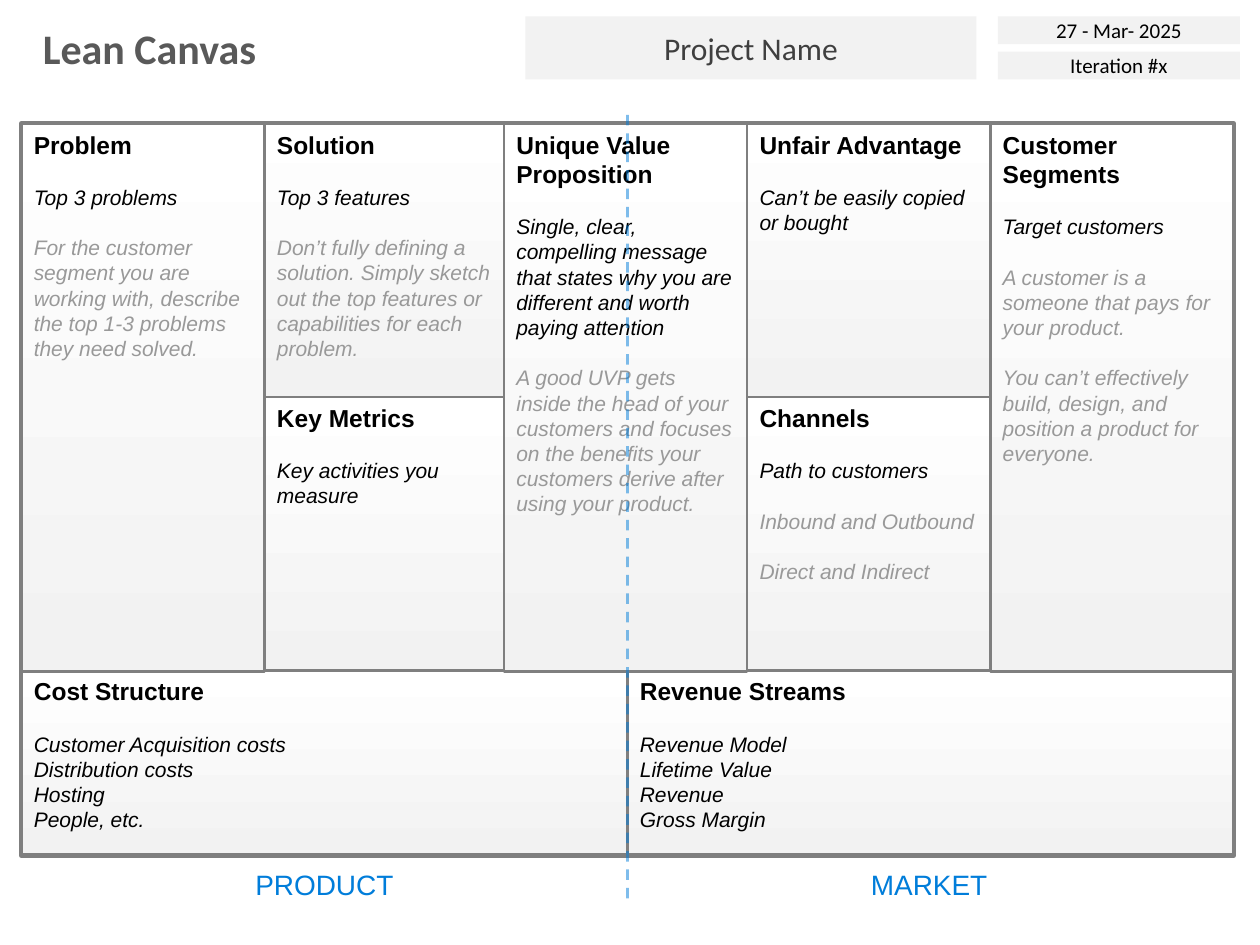
from lxml import etree
from pptx import Presentation
from pptx.dml.color import RGBColor
from pptx.enum import dml, shapes, text
from pptx.oxml import ns
from pptx.util import Inches, Pt

BLACK, GRAY, BLUE, BORDER, PALE = "000000", "999999", "007DDA", "7F7F7F", "F2F2F2"
LEFT, TOP, WIDTH, HEIGHT = 0.17, 0.98, 9.62, 5.81
BLOCK_W, FULL_H, BASE_H = 1.93, 4.35, 1.46
HALF_H, HALF_W = 2.17, WIDTH / 2
MIDDLE, BASE = TOP + HALF_H, TOP + 2 * HALF_H
CENTER = LEFT + HALF_W
# The first two columns start at the left edge, the last three end at the right edge
COLS = [LEFT + i * BLOCK_W for i in range(2)] + [LEFT + WIDTH - i * BLOCK_W for i in (3, 2, 1)]

HEADER = [  # text, left, top, width, height, size, colour
    ("Project Name", 4.17, 0.13, 3.58, 0.5, 18, "3F3F3F"),
    ("27 - Mar- 2025", 7.92, 0.13, 1.92, 0.22, 12, BLACK),
    ("Iteration #x", 7.92, 0.41, 1.92, 0.22, 12, BLACK),
]

BLOCKS = [  # heading, box, lines in black, hints in gray
    ("Cost Structure", (LEFT, BASE, HALF_W, BASE_H),
     ["Customer Acquisition costs", "Distribution costs", "Hosting", "People, etc."], []),
    ("Revenue Streams", (CENTER, BASE, HALF_W, BASE_H),
     ["Revenue Model", "Lifetime Value", "Revenue", "Gross Margin"], []),
    ("Problem", (COLS[0], TOP, BLOCK_W, FULL_H), ["Top 3 problems"],
     ["For the customer segment you are working with, describe the top 1-3 problems "
      "they need solved."]),
    ("Solution", (COLS[1], TOP, BLOCK_W, HALF_H), ["Top 3 features"],
     ["Don’t fully defining a solution. Simply sketch out the top features or "
      "capabilities for each problem."]),
    ("Key Metrics", (COLS[1], MIDDLE, BLOCK_W, HALF_H), ["Key activities you measure"], []),
    ("Unique Value Proposition", (COLS[2], TOP, BLOCK_W, FULL_H),
     ["Single, clear, compelling message that states why you are different and worth "
      "paying attention"],
     ["A good UVP gets inside the head of your customers and focuses on the benefits "
      "your customers derive after using your product."]),
    ("Unfair Advantage", (COLS[3], TOP, BLOCK_W, HALF_H),
     ["Can’t be easily copied or bought"], []),
    ("Channels", (COLS[3], MIDDLE, BLOCK_W, HALF_H), ["Path to customers"],
     ["Inbound and Outbound", "Direct and Indirect"]),
    ("Customer Segments", (COLS[4], TOP, BLOCK_W, FULL_H), ["Target customers"],
     ["A customer is a someone that pays for your product.",
      "You can’t effectively build, design, and position a product for everyone."]),
]

SIDES = [("PRODUCT", 1.92, 1.31), ("MARKET", 6.81, 1.13)]  # text, left, width


def rgb(value):
    return RGBColor.from_string(value)


def inches(*values):
    return [Inches(round(v, 2)) for v in values]


def write(p, words, size=12, color=BLACK, font="Arial", bold=False, italic=False,
          align=text.PP_ALIGN.LEFT, gap=0):
    """Put one formatted run in a paragraph, with gap points above it."""
    p.alignment = align
    if gap:
        p.space_before = Pt(gap)
    r = p.add_run()
    r.text = words
    f = r.font
    f.name, f.size, f.bold, f.italic = font, Pt(size), bold, italic
    f.color.rgb = rgb(color)


def add_box(s, kind, box):
    sp = s.shapes.add_shape(kind, *inches(*box))
    sp.shadow.inherit = False
    sp.text_frame.word_wrap = True
    return sp


def add_panel(s, box, weight):
    """Square-cornered box with a gray border."""
    sp = add_box(s, shapes.MSO_SHAPE.ROUNDED_RECTANGLE, box)
    sp.adjustments[0] = 0
    sp.line.color.rgb = rgb(BORDER)
    sp.line.width = Pt(weight)
    return sp


def add_block(s, heading, box, lines, hints):
    sp = add_panel(s, box, 1.5)
    sp.fill.gradient()
    sp.fill.gradient_angle = 90
    for stop, color in zip(sp.fill.gradient_stops, (PALE, "FFFFFF")):
        stop.color.rgb = rgb(color)
    tf = sp.text_frame
    tf.vertical_anchor = text.MSO_ANCHOR.TOP
    write(tf.paragraphs[0], heading, size=14, bold=True)
    for i, line in enumerate(lines):
        write(tf.add_paragraph(), line, italic=True, gap=0 if i else 14.4)
    for hint in hints:
        write(tf.add_paragraph(), hint, color=GRAY, italic=True, gap=14.4)


def add_divider(s):
    """Translucent dashed line between the product and market halves."""
    line = s.shapes.add_connector(shapes.MSO_CONNECTOR.STRAIGHT,
                                  *inches(CENTER, 7.13, CENTER, 0.86))
    line.line.color.rgb = rgb(BLUE)
    line.line.width = Pt(1.5)
    line.line.dash_style = dml.MSO_LINE.DASH
    props = line._element.spPr
    color = props.find(".//" + ns.qn("a:srgbClr"))
    etree.SubElement(color, ns.qn("a:alpha"), val="49000")
    etree.SubElement(props, ns.qn("a:effectLst"))


def main():
    prs = Presentation()
    prs.slide_width, prs.slide_height = inches(10, 7.5)
    s = prs.slides.add_slide(prs.slide_layouts[5])

    title = s.shapes.title
    title.left, title.top, title.width, title.height = inches(0.24, 0.13, 1.92, 0.5)
    tf = title.text_frame
    tf.word_wrap = False
    tf.auto_size = text.MSO_AUTO_SIZE.NONE
    tf.vertical_anchor = text.MSO_ANCHOR.TOP
    write(tf.paragraphs[0], "Lean Canvas", size=24, color="595959", font="Calibri", bold=True)

    add_panel(s, (LEFT, TOP, WIDTH, HEIGHT), 3).fill.background()

    for words, left, top, width, height, size, color in HEADER:
        sp = add_box(s, shapes.MSO_SHAPE.RECTANGLE, (left, top, width, height))
        sp.fill.solid()
        sp.fill.fore_color.rgb = rgb(PALE)
        sp.line.fill.background()
        sp.text_frame.vertical_anchor = text.MSO_ANCHOR.MIDDLE
        write(sp.text_frame.paragraphs[0], words, size=size, color=color, font="Calibri",
              align=text.PP_ALIGN.CENTER)

    for block in BLOCKS:
        add_block(s, *block)

    for words, left, width in SIDES:
        tf = s.shapes.add_textbox(*inches(left, 6.84, width, 0.37)).text_frame
        tf.word_wrap = True
        write(tf.paragraphs[0], words, size=16, color=BLUE, align=text.PP_ALIGN.CENTER)

    add_divider(s)
    prs.save("out.pptx")


if __name__ == "__main__":
    main()
